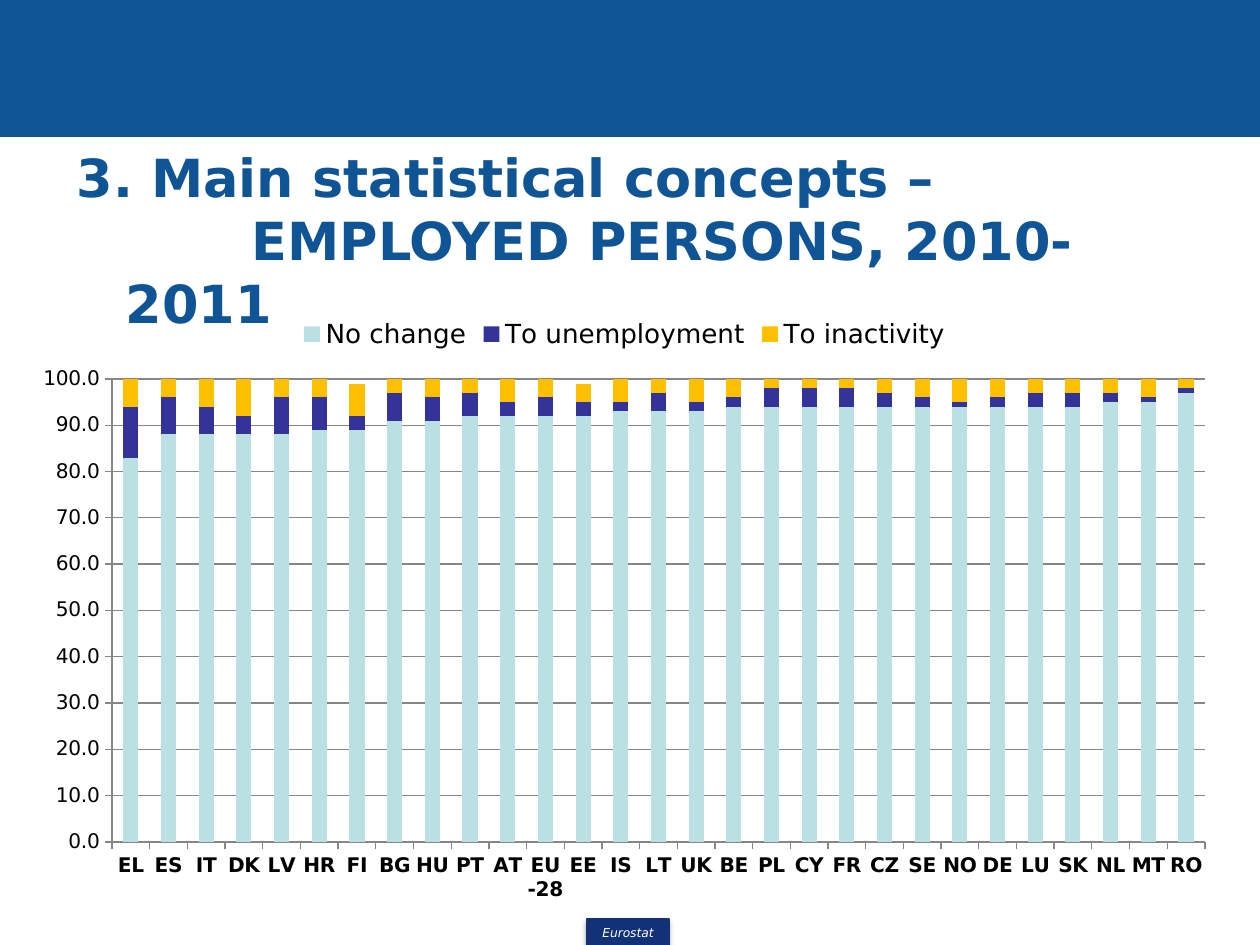
from lxml.etree import SubElement
from pptx import Presentation
from pptx.chart.data import CategoryChartData
from pptx.dml.color import RGBColor
from pptx.enum.chart import XL_CHART_TYPE, XL_LEGEND_POSITION, XL_TICK_MARK
from pptx.enum.shapes import MSO_SHAPE
from pptx.enum.text import MSO_ANCHOR, MSO_AUTO_SIZE, PP_ALIGN
from pptx.oxml import parse_xml
from pptx.oxml.ns import nsdecls, qn
from pptx.util import Emu, Pt

FONT = "DejaVu Sans"
COLORS = {
    "blue": "0F5494",
    "navy": "133176",
    "white": "FFFFFF",
    "black": "000000",
    "grid": "868686",
    "No change": "BBE0E3",
    "To unemployment": "333399",
    "To inactivity": "FFC000",
}


def px(*lengths):
    return [Emu(round(length * 914400 / 126)) for length in lengths]


def color(name):
    return RGBColor.from_string(COLORS[name])


prs = Presentation()
prs.slide_width, prs.slide_height = px(1260, 945)
slide = prs.slides.add_slide(prs.slide_layouts[5])

blocks = []
for place, fill in [((0, 0, 1260, 136), "blue"), ((587, 919, 82, 28), "navy")]:
    block = slide.shapes.add_shape(MSO_SHAPE.RECTANGLE, *px(*place))
    block.shadow.inherit = False
    block.fill.solid()
    block.fill.fore_color.rgb = color(fill)
    block.line.color.rgb = color(fill)
    block.line.width = Pt(0.75)
    blocks.append(block)

header, footer = blocks
footer.element.spPr.find(qn("a:effectLst")).append(parse_xml(
    f'<a:outerShdw {nsdecls("a")} blurRad="39370" dist="22860" dir="5400000" rotWithShape="0">'
    '<a:srgbClr val="000000"><a:alpha val="35000"/></a:srgbClr></a:outerShdw>'))
footer.text_frame.margin_left = footer.text_frame.margin_right = 0
footer.text_frame.vertical_anchor = MSO_ANCHOR.MIDDLE
agency = footer.text_frame.paragraphs[0]
agency.text = "Eurostat"
agency.alignment = PP_ALIGN.CENTER
agency.font.size = Pt(7)
agency.font.name = FONT
agency.font.italic = True
agency.font.color.rgb = color("white")

title = slide.shapes.title
title.left, title.top, title.width, title.height = px(64, 175, 1134, 129)
title.text_frame.word_wrap = True
title.text_frame.auto_size = MSO_AUTO_SIZE.NONE
title.text_frame.vertical_anchor = MSO_ANCHOR.MIDDLE
heading = title.text_frame.paragraphs[0]
heading.text = "3. Main statistical concepts – \v\tEMPLOYED PERSONS, 2010-2011"
heading.alignment = PP_ALIGN.LEFT
indent, tab_size = px(49, 126)
heading_format = heading._p.get_or_add_pPr()
heading_format.set("marL", str(indent))
heading_format.set("indent", str(-indent))
heading_format.set("defTabSz", str(tab_size))
heading.font.size = Pt(30)
heading.font.name = FONT
heading.font.bold = True
heading.font.color.rgb = color("blue")

countries = ("EL ES IT DK LV HR FI BG HU PT AT EU-28 EE IS LT UK BE PL CY FR "
             "CZ SE NO DE LU SK NL MT RO").split()
shares = {
    "No change": [
        83, 88, 88, 88, 88, 89, 89, 91, 91, 92, 92, 92, 92, 93, 93,
        93, 94, 94, 94, 94, 94, 94, 94, 94, 94, 94, 95, 95, 97],
    "To unemployment": [
        11, 8, 6, 4, 8, 7, 3, 6, 5, 5, 3, 4, 3, 2, 4,
        2, 2, 4, 4, 4, 3, 2, 1, 2, 3, 3, 2, 1, 1],
    "To inactivity": [
        6, 4, 6, 8, 4, 4, 7, 4, 4, 4, 5, 4, 4, 5, 3,
        5, 4, 3, 2, 3, 4, 4, 5, 4, 3, 3, 4, 4, 2],
}
transitions = CategoryChartData(number_format="0.0")
transitions.categories = countries
for status, values in shares.items():
    transitions.add_series(status, values)

chart = slide.shapes.add_chart(
    XL_CHART_TYPE.COLUMN_STACKED, *px(19, 304, 1211, 610), transitions).chart
chart.has_title = False
chart.font.size = Pt(10)
chart.font.name = FONT
chart.font.color.rgb = color("black")
chart.has_legend = True
chart.legend.position = XL_LEGEND_POSITION.TOP
chart.legend.include_in_layout = False
chart.legend.font.size = Pt(15)

columns = chart.plots[0]
columns.gap_width = 150
columns.overlap = 100
columns.vary_by_categories = False
for series in columns.series:
    series.format.fill.solid()
    series.format.fill.fore_color.rgb = color(series.name)

country_axis, share_axis = chart.category_axis, chart.value_axis
for axis in (country_axis, share_axis):
    axis.major_tick_mark = XL_TICK_MARK.OUTSIDE
    axis.minor_tick_mark = XL_TICK_MARK.NONE
    axis.tick_labels.font.size = Pt(11.5)
    axis.format.line.color.rgb = color("grid")
country_axis.tick_labels.font.bold = True
share_axis.minimum_scale = 0
share_axis.maximum_scale = 100
share_axis.major_unit = 10
share_axis.tick_labels.number_format = "0.0"
share_axis.tick_labels.number_format_is_linked = False
share_axis.has_major_gridlines = True
share_axis.major_gridlines.format.line.color.rgb = color("grid")

plot_area = chart._chartSpace.chart.plotArea
layout = plot_area.find(qn("c:layout"))
if layout is None:
    layout = SubElement(plot_area, qn("c:layout"))
    plot_area.insert(0, layout)
manual = SubElement(layout, qn("c:manualLayout"))
for tag, value in [("layoutTarget", "inner"), ("xMode", "edge"), ("yMode", "edge"),
                   ("x", 93 / 1211), ("y", 75 / 610), ("w", 1093 / 1211), ("h", 463 / 610)]:
    SubElement(manual, qn(f"c:{tag}")).set("val", str(value))

prs.save("out.pptx")
